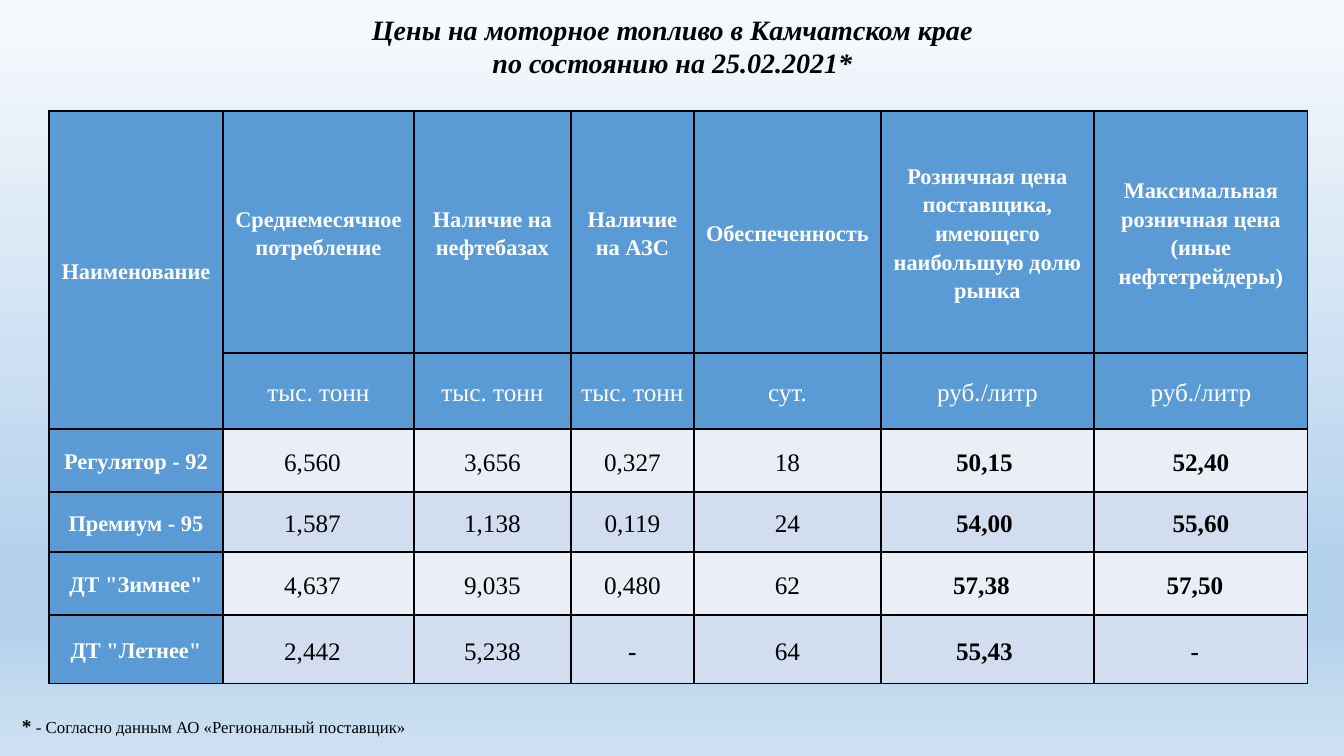
from dataclasses import dataclass

from lxml.etree import SubElement
from pptx import Presentation
from pptx.dml.color import RGBColor
from pptx.enum.text import MSO_ANCHOR, MSO_AUTO_SIZE, PP_ALIGN
from pptx.oxml.ns import qn
from pptx.util import Emu, Pt

SLIDE_WIDTH, SLIDE_HEIGHT = 1344, 756
EMU_PER_PX = 12192000 / SLIDE_WIDTH
FONT = "Times New Roman"
COLORS = {
    "header": "5B9BD5",
    "light band": "EAEFF7",
    "dark band": "D2DEEF",
    "white": "FFFFFF",
    "black": "000000",
}
BACKGROUND_STOPS = {0: "F7FAFD", 74: "B5D2EC", 83: "B5D2EC", 100: "CEE1F2"}

TABLE_LEFT, TABLE_TOP = 49, 111
COLUMN_WIDTHS = [174, 191, 157, 123, 187, 213, 214]
ROW_HEIGHTS = [242, 76, 63, 60, 63, 69]
CELL_INSET = 7
HEADINGS = [
    "Наименование",
    "Среднемесячное потребление",
    "Наличие на нефтебазах",
    "Наличие на АЗС",
    "Обеспеченность",
    "Розничная цена поставщика, имеющего наибольшую долю рынка",
    "Максимальная розничная цена\n(иные нефтетрейдеры)",
]
UNITS = ["тыс. тонн"] * 3 + ["сут."] + ["руб./литр"] * 2


@dataclass(frozen=True)
class Fuel:
    name: str
    values: list[str]
    price_shifts: tuple[int, int]  # extra right inset of the two price cells


FUELS = [
    Fuel("Регулятор - 92", ["6,560", "3,656", "0,327", "18", "50,15", "52,40"], (6, 0)),
    Fuel("Премиум - 95", ["1,587", "1,138", "0,119", "24", "54,00", "55,60"], (6, 0)),
    Fuel('ДТ "Зимнее"', ["4,637", "9,035", "0,480", "62", "57,38", "57,50"], (12, 12)),
    Fuel('ДТ "Летнее"', ["2,442", "5,238", "-", "64", "55,43", "-"], (6, 12)),
]
CONSUMPTION_SHIFT = 12


@dataclass(frozen=True)
class CellStyle:
    fill: str
    color: str
    size: int
    bold: bool


HEADING_STYLE = CellStyle("header", "white", 16, True)
UNIT_STYLE = CellStyle("header", "white", 18, False)


def px(length: float) -> Emu:
    return Emu(round(length * EMU_PER_PX))


def rgb(name: str) -> RGBColor:
    return RGBColor.from_string(COLORS[name])


def place(shape, left: int, top: int, width: int, height: int) -> None:
    shape.left, shape.top = px(left), px(top)
    shape.width, shape.height = px(width), px(height)


def set_font(target, size: int, bold: bool, color: str = "black") -> None:
    font = target.font
    font.name, font.size, font.bold = FONT, Pt(size), bold
    font.color.rgb = rgb(color)


def paint_background(page) -> None:
    fill = page.background.fill
    fill.gradient()
    fill.gradient_angle = 270
    stops = page.element.find(".//" + qn("a:gsLst"))
    for stop in list(stops):
        stops.remove(stop)
    for percent, color in BACKGROUND_STOPS.items():
        stop = SubElement(stops, qn("a:gs"), pos=str(percent * 1000))
        SubElement(stop, qn("a:srgbClr"), val=color)


def add_borders(cell) -> None:
    properties = cell._tc.get_or_add_tcPr()
    for side in ("lnL", "lnR", "lnT", "lnB"):
        line = SubElement(properties, qn(f"a:{side}"), w=str(Pt(1)))
        fill = SubElement(line, qn("a:solidFill"))
        SubElement(fill, qn("a:srgbClr"), val=COLORS["black"])


def fill_cell(cell, text: str, style: CellStyle, shift: int = 0) -> None:
    """Write and format one cell; shift widens its right inset."""
    add_borders(cell)
    cell.fill.solid()
    cell.fill.fore_color.rgb = rgb(style.fill)
    cell.vertical_anchor = MSO_ANCHOR.MIDDLE
    cell.margin_left, cell.margin_right = px(CELL_INSET), px(CELL_INSET + shift)
    cell.margin_top = cell.margin_bottom = 0
    cell.text = text
    for para in cell.text_frame.paragraphs:
        para.alignment = PP_ALIGN.CENTER
        para.line_spacing = 1.15
        set_font(para, style.size, style.bold, style.color)


def add_title(page) -> None:
    title = page.shapes.title
    place(title, 133, 7, 1079, 78)
    frame = title.text_frame
    frame.text = "Цены на моторное топливо в Камчатском крае\nпо состоянию на 25.02.2021*"
    frame.word_wrap = True
    frame.auto_size = MSO_AUTO_SIZE.NONE
    frame.vertical_anchor = MSO_ANCHOR.TOP
    for para in frame.paragraphs:
        para.alignment = PP_ALIGN.CENTER
        para.line_spacing = 1.0
        para.space_before = Pt(0)
        set_font(para, 20, True)
        para.font.italic = True


def add_price_table(page) -> None:
    table = page.shapes.add_table(
        len(ROW_HEIGHTS), len(COLUMN_WIDTHS), px(TABLE_LEFT), px(TABLE_TOP),
        px(sum(COLUMN_WIDTHS)), px(sum(ROW_HEIGHTS)),
    ).table
    table.first_row = table.horz_banding = False
    for column, width in zip(table.columns, COLUMN_WIDTHS):
        column.width = px(width)
    for row, height in zip(table.rows, ROW_HEIGHTS):
        row.height = px(height)

    for column, heading in enumerate(HEADINGS):
        fill_cell(table.cell(0, column), heading, HEADING_STYLE)
    for column, unit in enumerate([""] + UNITS):
        fill_cell(table.cell(1, column), unit, UNIT_STYLE)
    table.cell(0, 0).merge(table.cell(1, 0))

    for row, fuel in enumerate(FUELS, start=2):
        band = "dark band" if row % 2 else "light band"
        shifts = (CONSUMPTION_SHIFT, 0, 0, 0, *fuel.price_shifts)
        fill_cell(table.cell(row, 0), fuel.name, HEADING_STYLE)
        for column, (value, shift) in enumerate(zip(fuel.values, shifts), start=1):
            bold = column >= 5 or value == "-"
            style = CellStyle(band, "black", 18, bold)
            fill_cell(table.cell(row, column), value, style, shift)


def add_footnote(page) -> None:
    box = page.shapes.add_textbox(0, 0, 0, 0)
    place(box, 12, 709, 603, 34)
    box.text_frame.word_wrap = True
    para = box.text_frame.paragraphs[0]
    for text, size, bold in (
        ("*", 14, True),
        (" - Согласно данным АО «Региональный поставщик»", 12, False),
    ):
        span = para.add_run()
        span.text = text
        set_font(span, size, bold)


def main() -> None:
    deck = Presentation()
    deck.slide_width, deck.slide_height = px(SLIDE_WIDTH), px(SLIDE_HEIGHT)
    page = deck.slides.add_slide(deck.slide_layouts.get_by_name("Title Only"))
    paint_background(page)
    add_title(page)
    add_price_table(page)
    add_footnote(page)
    deck.save("out.pptx")


if __name__ == "__main__":
    main()
